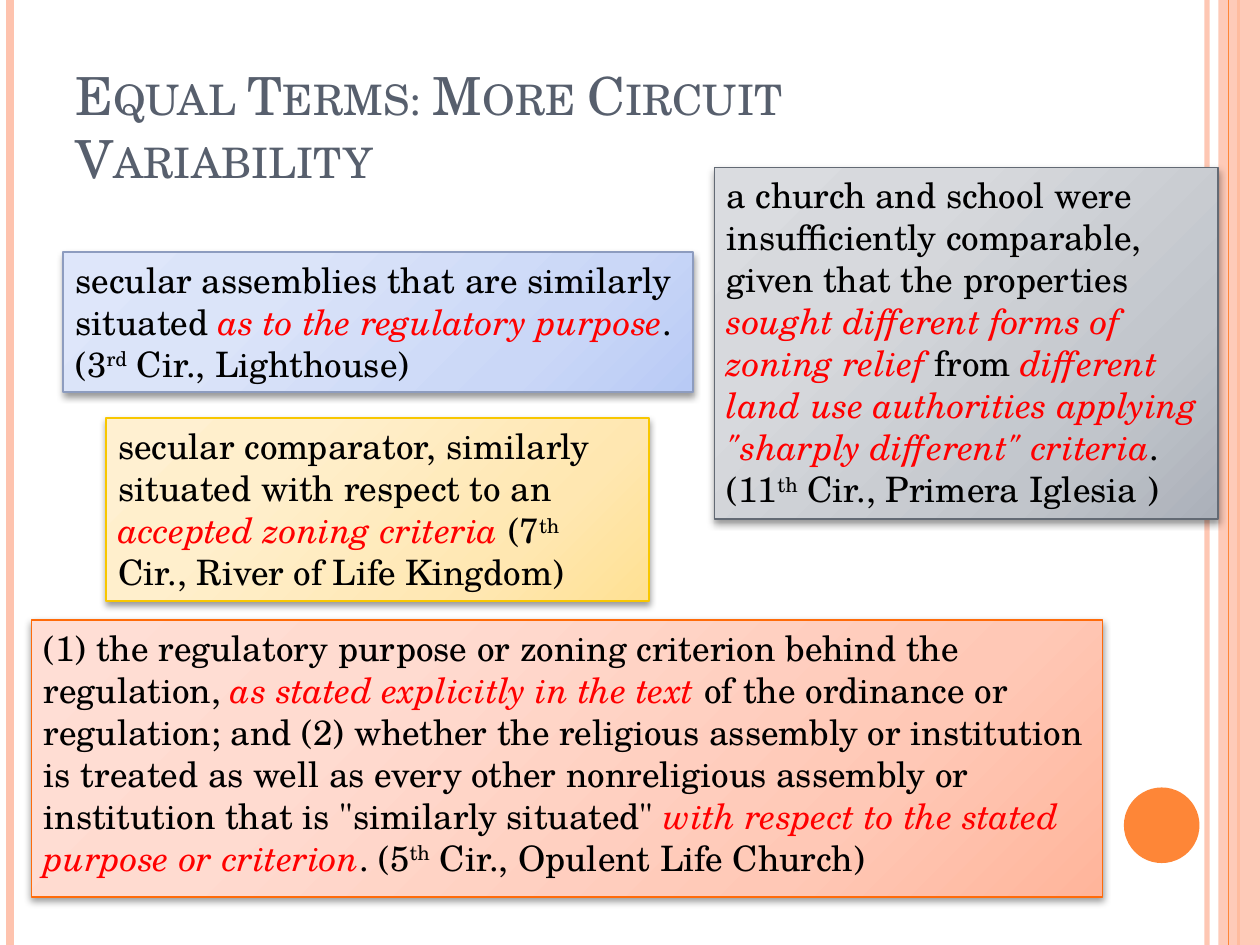
from lxml.etree import SubElement
from pptx import Presentation
from pptx.dml.color import RGBColor
from pptx.enum.shapes import MSO_CONNECTOR, MSO_SHAPE
from pptx.enum.text import MSO_ANCHOR, MSO_AUTO_SIZE, PP_ALIGN
from pptx.oxml import parse_xml
from pptx.oxml.ns import nsdecls, qn
from pptx.util import Inches, Pt

FONT = "TeX Gyre Schola"
COLORS = {
    "title": "575F6D",
    "text": "000000",
    "stress": "FF0000",
    "pink": "FEC3AE",
    "orange": "FE8637",
}
PALETTES = {
    "yellow": ("F8C700", ["FFF0D1", "FFEFCC", "FFE7B1", "FFE193"]),
    "gray": ("636A74", ["DADCE0", "D7D9DD", "C1C5CB", "ABB0B9"]),
    "blue": ("8D9CBF", ["DEE6FA", "DBE4F9", "CAD7F7", "B8CAF5"]),
    "peach": ("FF6B0A", ["FFDED5", "FFDBD0", "FFC8B6", "FFB59B"]),
}
STOPS = [0, 30, 75, 100]
RULES = [
    (9.58, "pink", 3, 93),
    (0.08, "pink", 4.5, 100),
    (9.83, "orange", 1.5, 100),
]
QUOTES = [
    ("yellow", (0.84, 3.32, 4.31, 1.45), [
        ("secular comparator, similarly situated with respect to an ", "plain"),
        ("accepted zoning criteria ", "stress"),
        ("(7", "plain"),
        ("th", "super"),
        (" Cir., River of Life Kingdom)", "plain"),
    ]),
    ("gray", (5.67, 1.33, 4, 2.79), [
        ("a church and school were insufficiently comparable, "
         "given that the properties ", "plain"),
        ("sought different forms of zoning relief ", "stress"),
        ("from ", "plain"),
        ("different land use authorities applying "
         "\"sharply different\" criteria", "stress"),
        (". (11", "plain"),
        ("th", "super"),
        (" Cir., Primera Iglesia )", "plain"),
    ]),
    ("blue", (0.5, 2, 5, 1.11), [
        ("secular assemblies that are similarly situated ", "plain"),
        ("as to the regulatory purpose", "stress"),
        (". (3", "plain"),
        ("rd", "super"),
        (" Cir., Lighthouse)", "plain"),
    ]),
    ("peach", (0.25, 4.92, 8.5, 2.2), [
        ("(1) the regulatory purpose or zoning criterion "
         "behind the regulation, ", "plain"),
        ("as stated explicitly in the text ", "stress"),
        ("of the ordinance or regulation; and (2) whether the religious "
         "assembly or institution is treated as well as every other "
         "nonreligious assembly or institution that is "
         "\"similarly situated\" ", "plain"),
        ("with respect to the stated purpose or criterion", "stress"),
        (". (5", "plain"),
        ("th", "super"),
        (" Cir., Opulent Life Church)", "plain"),
    ]),
]


def rgb(name):
    return RGBColor.from_string(COLORS[name])


def set_alpha(fill_parent, percent):
    color = fill_parent.find(".//" + qn("a:srgbClr"))
    SubElement(color, qn("a:alpha")).set("val", str(percent * 1000))


def add_rule(s, x, color, width, alpha=100):
    line = s.shapes.add_connector(
        MSO_CONNECTOR.STRAIGHT, Inches(x), 0, Inches(x), Inches(7.5))
    line.line.color.rgb = rgb(color)
    line.line.width = Pt(width)
    spPr = line._element.spPr
    if alpha < 100:
        set_alpha(spPr, alpha)
    SubElement(spPr, qn("a:effectLst"))


def add_plain_shape(s, kind, box, color, alpha=100):
    sp = s.shapes.add_shape(kind, *map(Inches, box))
    sp.shadow.inherit = False
    sp.fill.solid()
    sp.fill.fore_color.rgb = rgb(color)
    sp.line.fill.background()
    if alpha < 100:
        set_alpha(sp._element.spPr, alpha)


def add_run(p, text, size, color):
    r = p.add_run()
    r.text = text
    r.font.name = FONT
    r.font.size = Pt(size)
    r.font.color.rgb = rgb(color)
    return r


def add_title(s, text):
    sp = s.shapes.add_textbox(*map(Inches, (0.5, 0.3, 8.17, 1.25)))
    tf = sp.text_frame
    tf.word_wrap = True
    tf.vertical_anchor = MSO_ANCHOR.BOTTOM
    r = add_run(tf.paragraphs[0], text, 30, "title")
    r.font._element.set("cap", "small")


def set_gradient(sp, colors):
    stops = "".join(
        f'<a:gs pos="{pos * 1000}"><a:srgbClr val="{color}"/></a:gs>'
        for pos, color in zip(STOPS, colors))
    sp.fill.solid()
    spPr = sp._element.spPr
    spPr.replace(spPr.find(qn("a:solidFill")), parse_xml(
        f'<a:gradFill {nsdecls("a")} rotWithShape="1"><a:gsLst>{stops}</a:gsLst>'
        '<a:path path="circle"><a:fillToRect r="100000" b="100000"/></a:path>'
        '</a:gradFill>'))


def set_shadow(sp):
    sp.shadow.inherit = False
    sp._element.spPr.find(qn("a:effectLst")).append(parse_xml(
        f'<a:outerShdw {nsdecls("a")} blurRad="{Pt(4)}" dist="{Pt(2)}" '
        'dir="5400000" rotWithShape="0"><a:srgbClr val="000000">'
        '<a:alpha val="40000"/></a:srgbClr></a:outerShdw>'))


def add_quote(s, palette, box, parts):
    border, colors = PALETTES[palette]
    sp = s.shapes.add_shape(MSO_SHAPE.RECTANGLE, *map(Inches, box))
    set_gradient(sp, colors)
    sp.line.color.rgb = RGBColor.from_string(border)
    sp.line.width = Pt(1)
    set_shadow(sp)
    tf = sp.text_frame
    tf.word_wrap = True
    tf.auto_size = MSO_AUTO_SIZE.SHAPE_TO_FIT_TEXT
    tf.vertical_anchor = MSO_ANCHOR.TOP
    p = tf.paragraphs[0]
    p.alignment = PP_ALIGN.LEFT
    for text, style in parts:
        stressed = style == "stress"
        r = add_run(p, text, 20, "stress" if stressed else "text")
        r.font.italic = stressed
        if style == "super":
            r.font._element.set("baseline", "30000")


def main():
    prs = Presentation()
    prs.slide_width, prs.slide_height = Inches(10), Inches(7.5)
    s = prs.slides.add_slide(prs.slide_layouts[6])
    for rule in RULES:
        add_rule(s, *rule)
    add_plain_shape(s, MSO_SHAPE.RECTANGLE, (9.67, 0, 0.33, 7.5), "pink", 87)
    add_rule(s, 9.75, "orange", 0.75)
    add_plain_shape(s, MSO_SHAPE.OVAL, (8.92, 6.25, 0.6, 0.6), "orange")
    add_title(s, "Equal Terms: More Circuit Variability")
    for quote in QUOTES:
        add_quote(s, *quote)
    prs.save("out.pptx")


if __name__ == "__main__":
    main()
